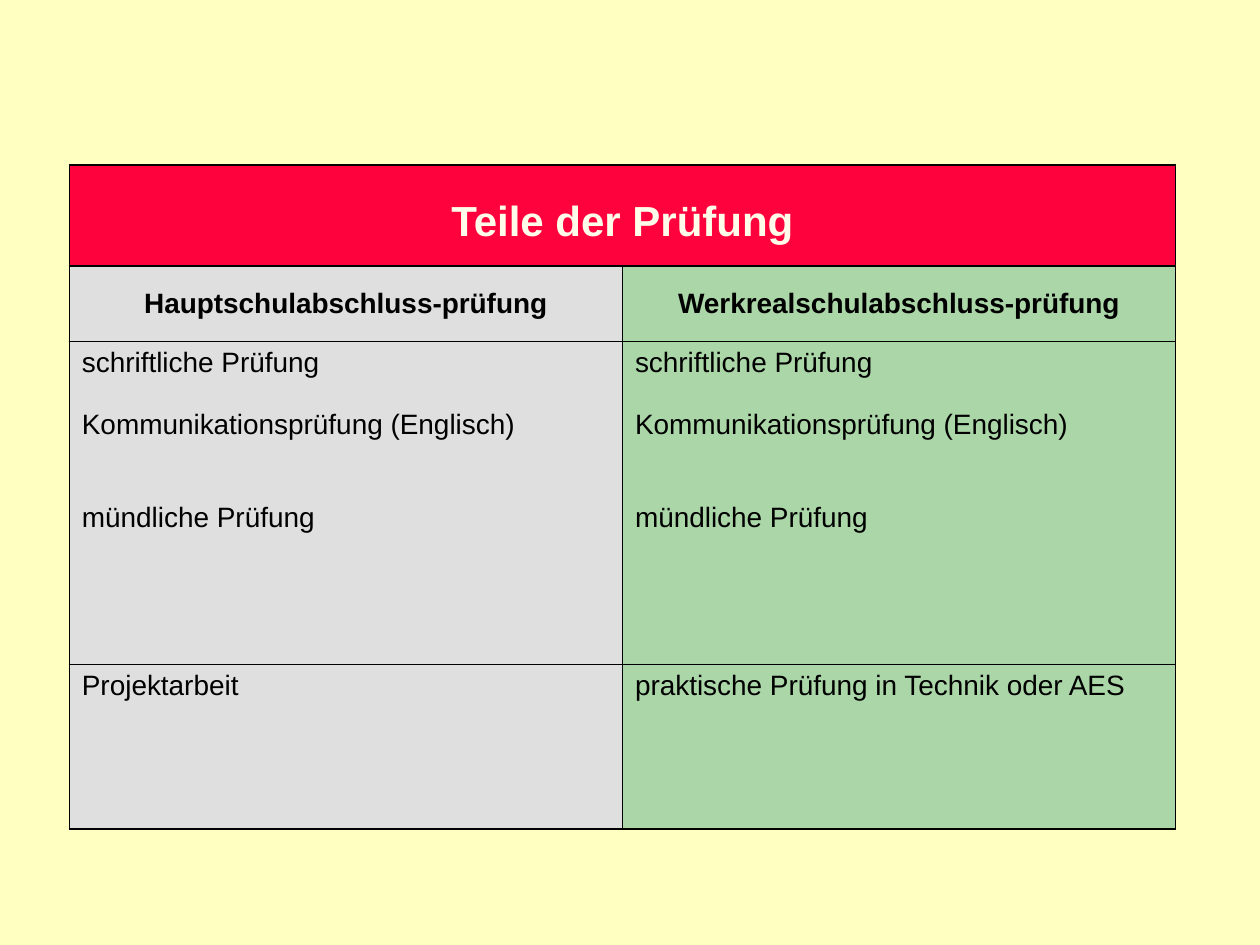
from lxml.etree import SubElement
from pptx import Presentation
from pptx.dml.color import RGBColor
from pptx.enum.text import MSO_ANCHOR, PP_ALIGN
from pptx.oxml import parse_xml
from pptx.oxml.ns import nsdecls, qn
from pptx.util import Inches, Pt

CREAM = RGBColor(0xFF, 0xFF, 0xC1)
IVORY = RGBColor(0xFF, 0xFD, 0xE9)
RED = RGBColor(0xFE, 0x02, 0x3E)
GREY = RGBColor(0xDF, 0xDF, 0xDF)
GREEN = RGBColor(0x59, 0xAF, 0x8F)
BLACK = RGBColor(0, 0, 0)

# Content: each line is (text, space before in points)
TITLE = "Teile der Prüfung"
HEADS = ["Hauptschulabschluss-prüfung", "Werkrealschulabschluss-prüfung"]
EXAMS = [
    ("schriftliche Prüfung", 0),
    ("Kommunikationsprüfung (Englisch)", 17.5),
    ("mündliche Prüfung", 35),
]
TASKS = ["Projektarbeit", "praktische Prüfung in Technik oder AES"]

LEFT, TOP, COL = 0.55, 1.31, 4.39
ROWS = [0.8, 0.6, 2.56, 1.31]
THICK, THIN = 1, 0.25


def draw_edges(cell, top=THICK, bottom=THICK):
    props = cell._tc.get_or_add_tcPr()
    edges = [("lnL", THICK), ("lnR", THICK), ("lnT", top), ("lnB", bottom)]
    for pos, (tag, width) in enumerate(edges):
        props.insert(pos, parse_xml(
            f'<a:{tag} {nsdecls("a")} w="{Pt(width)}"><a:solidFill>'
            f'<a:srgbClr val="{BLACK}"/></a:solidFill></a:{tag}>'))


def paint(cell, color):
    cell.fill.solid()
    cell.fill.fore_color.rgb = color
    if color == GREEN:  # half transparent
        tint = cell._tc.tcPr.find(f'{qn("a:solidFill")}/{qn("a:srgbClr")}')
        SubElement(tint, qn("a:alpha")).set("val", "50000")


def write(cell, lines, size=16, color=BLACK, head=False):
    frame = cell.text_frame
    for i, (text, gap) in enumerate(lines):
        para = frame.add_paragraph() if i else frame.paragraphs[0]
        para.alignment = PP_ALIGN.CENTER if head else PP_ALIGN.LEFT
        if gap:
            para.space_before = Pt(gap)
        run = para.add_run()
        run.text = text
        font = run.font
        font.name, font.size, font.bold = "Arial", Pt(size), head
        font.color.rgb = color
    cell.vertical_anchor = MSO_ANCHOR.MIDDLE if head else MSO_ANCHOR.TOP


deck = Presentation()
deck.slide_width, deck.slide_height = Inches(10), Inches(7.5)
slide = deck.slides.add_slide(deck.slide_layouts[6])
slide.background.fill.solid()
slide.background.fill.fore_color.rgb = CREAM

# Table grid
table = slide.shapes.add_table(
    len(ROWS), 2, Inches(LEFT), Inches(TOP),
    Inches(2 * COL), Inches(sum(ROWS))).table
for row, height in zip(table.rows, ROWS):
    row.height = Inches(height)
for col in table.columns:
    col.width = Inches(COL)

# Title row
title = table.cell(0, 0)
title.merge(table.cell(0, 1))
write(title, [(TITLE, 0)], 24, IVORY, head=True)
title.margin_top = Inches(0.15)
for c in range(2):
    paint(table.cell(0, c), RED)
    draw_edges(table.cell(0, c))

# One column per type of exam
for c, color in enumerate([GREY, GREEN]):
    head, exams, task = [table.cell(r, c) for r in (1, 2, 3)]
    write(head, [(HEADS[c], 0)], head=True)
    write(exams, EXAMS)
    write(task, [(TASKS[c], 0)])
    for cell in (head, exams, task):
        paint(cell, color)
    draw_edges(head)
    draw_edges(exams, bottom=THIN)
    draw_edges(task, top=THIN)

deck.save("out.pptx")
